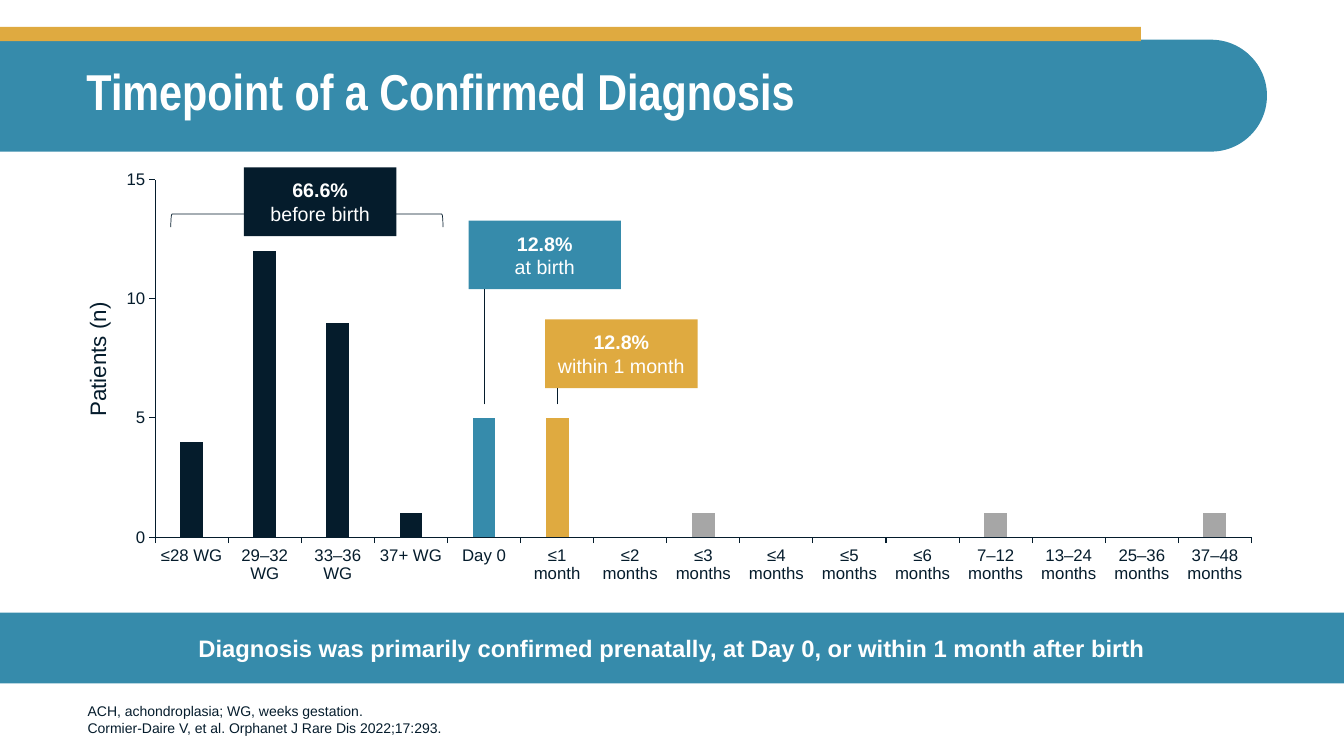
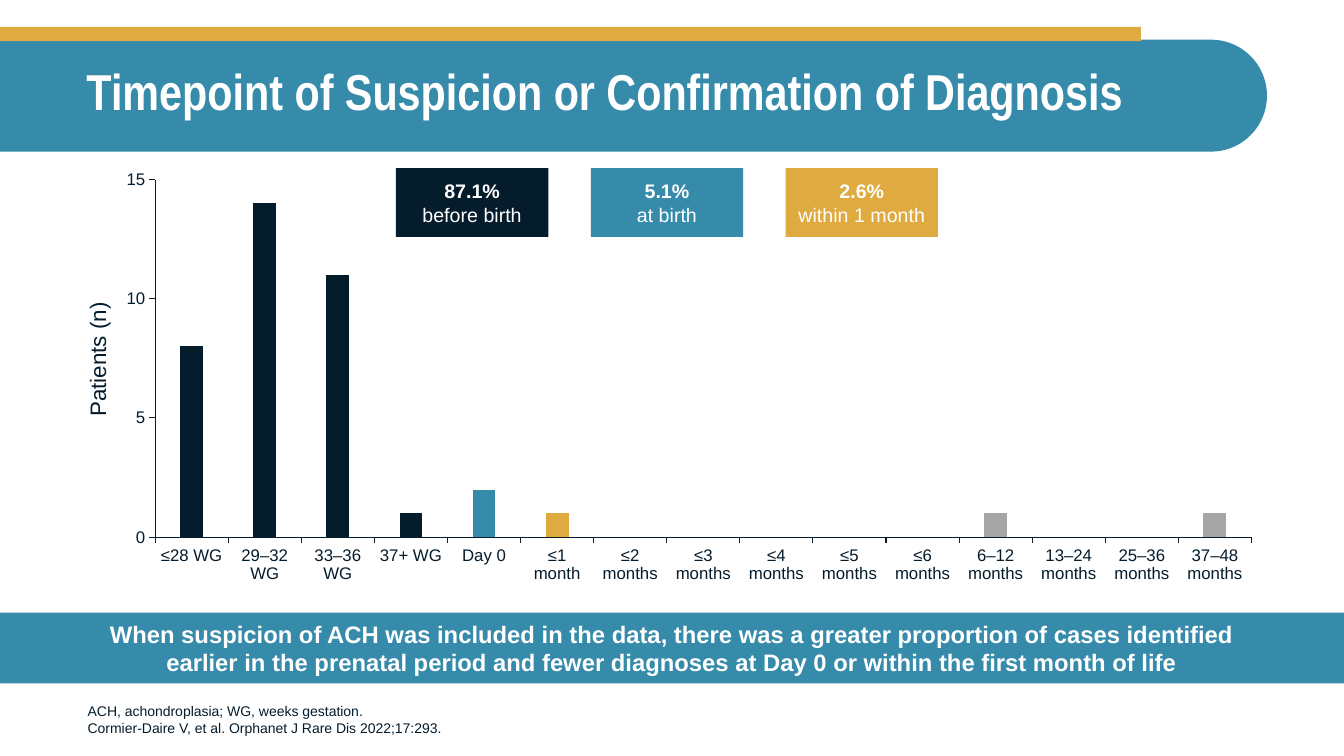
from dataclasses import dataclass

from lxml import etree
from pptx import Presentation
from pptx.chart.data import CategoryChartData
from pptx.dml.color import RGBColor
from pptx.enum.chart import XL_CHART_TYPE, XL_TICK_MARK
from pptx.enum.shapes import MSO_CONNECTOR, MSO_SHAPE
from pptx.enum.text import MSO_ANCHOR, PP_ALIGN
from pptx.oxml import parse_xml
from pptx.oxml.ns import nsdecls, qn
from pptx.util import Cm, Pt

COLUMNS = XL_CHART_TYPE.COLUMN_CLUSTERED
TICK_OUT, TICK_NONE = XL_TICK_MARK.OUTSIDE, XL_TICK_MARK.NONE
STRAIGHT = MSO_CONNECTOR.STRAIGHT
RECT = MSO_SHAPE.RECTANGLE
ROUND_END = MSO_SHAPE.ROUND_2_SAME_RECTANGLE
BRACKET = MSO_SHAPE.RIGHT_BRACKET
LEFT, CENTER = PP_ALIGN.LEFT, PP_ALIGN.CENTER
MIDDLE, BOTTOM = MSO_ANCHOR.MIDDLE, MSO_ANCHOR.BOTTOM


@dataclass(frozen=True)
class Theme:
    navy: RGBColor = RGBColor.from_string("051C2C")
    teal: RGBColor = RGBColor.from_string("368BAB")
    gold: RGBColor = RGBColor.from_string("DFAA40")
    grey: RGBColor = RGBColor.from_string("A6A6A6")
    white: RGBColor = RGBColor.from_string("FFFFFF")
    title_font: str = "Arial Narrow"
    body_font: str = "Arial"
    title: int = 36
    message: int = 17
    axis_title: int = 16
    tag: int = 14
    tick: int = 12
    footnote: int = 10
    hairline: float = 0.5
    axis_line: float = 0.75


THEME = Theme()

# Content
FOOTNOTES = [
    "ACH, achondroplasia; WG, weeks gestation.",
    "Cormier‑Daire V, et al. Orphanet J Rare Dis 2022;17:293.",
]
AXIS_TITLE = "Patients (n)"
BEFORE_BIRTH = ["≤28 WG", "29–32 WG", "33–36 WG", "37+ WG"]
FIRST_MONTH = ["Day 0", "≤1 month"]
MONTHS = [f"≤{month} months" for month in range(2, 7)]
LATE = ["13–24 months", "25–36 months", "37–48 months"]
STAGES = [("before birth", THEME.navy), ("at birth", THEME.teal),
          ("within 1 month", THEME.gold)]
SLIDES = [
    {
        "title": "Timepoint of a Confirmed Diagnosis",
        "message": "Diagnosis was primarily confirmed prenatally, at Day 0, "
                   "or within 1 month after birth",
        "half_year": "7–12 months",
        "patients": [4, 12, 9, 1, 5, 5, None, 1, None, None, None, 1, None, None, 1],
        "shares": ["66.6%", "12.8%", "12.8%"],
        "tag_places": [(6.15, 4.22), (11.81, 5.56), (13.74, 8.05)],
        "pointers": True,
    },
    {
        "title": "Timepoint of Suspicion or Confirmation of Diagnosis",
        "message": "When suspicion of ACH was included in the data, there was a greater "
                   "proportion of cases identified earlier in the prenatal period and "
                   "fewer diagnoses at Day 0 or within the first month of life",
        "half_year": "6–12 months",
        "patients": [8, 14, 11, 1, 2, 1, None, None, None, None, None, 1, None, None, 1],
        "shares": ["87.1%", "5.1%", "2.6%"],
        "tag_places": [(9.98 + 4.91 * i, 4.24) for i in range(3)],
        "pointers": False,
    },
]

# Geometry in centimetres
PAGE_W, PAGE_H = 33.87, 19.05
BAND_W, BAND_H, BAND_TOP = 31.93, 2.82, 1
CHART_X, CHART_Y, CHART_W, CHART_H = 1.93, 4.04, 30, 10.77
PLOT = {"x": 0.066, "y": 0.045, "w": 0.921, "h": 0.837}
TAG_W, TAG_H = 3.84, 1.73
POINTER_END = 10.19
CATEGORY_COUNT = len(BEFORE_BIRTH + FIRST_MONTH + MONTHS + LATE) + 1


def category_center(index):
    step = CHART_W * PLOT["w"] / CATEGORY_COUNT
    return CHART_X + CHART_W * PLOT["x"] + step * (index + 0.5)


def bar_color(index):
    stage = max(0, index - len(BEFORE_BIRTH) + 1)
    return STAGES[stage][1] if stage < len(STAGES) else THEME.grey


# Building blocks
def style(font, size, color, bold=False, name=THEME.body_font):
    font.name, font.size, font.bold = name, Pt(size), bold
    font.color.rgb = color


def write(shape, lines, size, color, align=LEFT, anchor=MIDDLE, bold=(),
          name=THEME.body_font):
    """One paragraph per line; bold lists the indexes of bold lines."""
    frame = shape.text_frame
    frame.word_wrap = True
    frame.vertical_anchor = anchor
    for i, line in enumerate(lines):
        paragraph = frame.add_paragraph() if i else frame.paragraphs[0]
        paragraph.alignment = align
        run = paragraph.add_run()
        run.text = line
        style(run.font, size, color, i in bold, name)
    return frame


def add_box(slide, kind, x, y, w, h, fill):
    box = slide.shapes.add_shape(kind, Cm(x), Cm(y), Cm(w), Cm(h))
    box.shadow.inherit = False
    box.fill.solid()
    box.fill.fore_color.rgb = fill
    box.line.fill.background()
    return box


def add_text(slide, x, y, w, h, lines, size, color, **options):
    box = slide.shapes.add_textbox(Cm(x), Cm(y), Cm(w), Cm(h))
    return box, write(box, lines, size, color, **options)


def add_frame(slide, title, message):
    # Title band, drawn upright and turned so its round end faces right
    band = add_box(slide, ROUND_END, (BAND_W - BAND_H) / 2,
                   BAND_TOP + (BAND_H - BAND_W) / 2, BAND_H, BAND_W, THEME.teal)
    band.adjustments[0], band.adjustments[1] = 0, 0.5
    band.rotation = 270
    add_box(slide, RECT, 0, 0.68, 28.75, 0.36, THEME.gold)
    _, heading = add_text(slide, CHART_X, 0.99, CHART_W, 2.79, [title], THEME.title,
                          THEME.white, bold=(0,), name=THEME.title_font)
    heading.paragraphs[0].line_spacing = 0.9

    # Footnotes and key message
    add_text(slide, 1.96, 17.25, 25.1, 1.42, FOOTNOTES, THEME.footnote, THEME.navy,
             anchor=BOTTOM)
    banner = add_box(slide, RECT, 0, 15.44, PAGE_W, 1.78, THEME.teal)
    frame = write(banner, [message], THEME.message, THEME.white, CENTER, bold=(0,))
    frame.margin_left = frame.margin_right = Cm(2)


def add_patient_chart(slide, half_year, patients):
    data = CategoryChartData()
    data.categories = BEFORE_BIRTH + FIRST_MONTH + MONTHS + [half_year] + LATE
    data.add_series(AXIS_TITLE, patients)
    chart = slide.shapes.add_chart(COLUMNS, Cm(CHART_X), Cm(CHART_Y), Cm(CHART_W),
                                   Cm(CHART_H), data).chart
    chart.has_legend = chart.has_title = False
    style(chart.font, THEME.tick, THEME.navy)

    for axis in (chart.category_axis, chart.value_axis):
        axis.has_major_gridlines = False
        axis.major_tick_mark, axis.minor_tick_mark = TICK_OUT, TICK_NONE
        axis.format.line.color.rgb = THEME.navy
        axis.format.line.width = Pt(THEME.axis_line)
        style(axis.tick_labels.font, THEME.tick, THEME.navy)
    counts = chart.value_axis
    counts.minimum_scale, counts.maximum_scale, counts.major_unit = 0, 15, 5

    plot = chart.plots[0]
    plot.gap_width, plot.overlap, plot.vary_by_categories = 219, -27, False
    bars = plot.series[0]
    bars.invert_if_negative = False
    bars.format.fill.solid()
    bars.format.fill.fore_color.rgb = THEME.navy
    for i, count in enumerate(patients):
        if count and i >= len(BEFORE_BIRTH):
            fill = bars.points[i].format.fill
            fill.solid()
            fill.fore_color.rgb = bar_color(i)

    # Fixed inner plot area
    area = chart.element.find(".//" + qn("c:plotArea"))
    for old in area.findall(qn("c:layout")):
        area.remove(old)
    modes = '<c:layoutTarget val="inner"/><c:xMode val="edge"/><c:yMode val="edge"/>'
    sizes = "".join(f'<c:{key} val="{value}"/>' for key, value in PLOT.items())
    area.insert(0, parse_xml(f'<c:layout {nsdecls("c")}><c:manualLayout>{modes}{sizes}'
                             '</c:manualLayout></c:layout>'))

    label, _ = add_text(slide, 0.45, 8.59, 4, 0.94, [AXIS_TITLE], THEME.axis_title,
                        THEME.navy, align=CENTER)
    label.rotation = 270


def add_bracket(slide):
    bracket = slide.shapes.add_shape(BRACKET, Cm(7.57), Cm(2.13), Cm(0.33), Cm(6.86))
    bracket.rotation = 270
    bracket.shadow.inherit = False
    bracket.fill.background()
    bracket.line.color.rgb = THEME.navy
    bracket.line.width = Pt(THEME.hairline)


def add_pointer(slide, x, top):
    pointer = slide.shapes.add_connector(STRAIGHT, Cm(x), Cm(POINTER_END), Cm(x), Cm(top))
    pointer.line.color.rgb = THEME.navy
    pointer.line.width = Pt(THEME.hairline)
    etree.SubElement(pointer.element.spPr, qn("a:effectLst"))


def add_tags(slide, shares, places, pointers):
    if pointers:
        add_bracket(slide)
    for share, (stage, fill), (x, y) in zip(shares, STAGES, places):
        tag = add_box(slide, RECT, x, y, TAG_W, TAG_H, fill)
        write(tag, [share, stage], THEME.tag, THEME.white, CENTER, bold=(0,))
    if pointers:
        for i, (_, y) in enumerate(places[1:], start=len(BEFORE_BIRTH)):
            add_pointer(slide, category_center(i), y + TAG_H)


def main():
    deck = Presentation()
    deck.slide_width, deck.slide_height = Cm(PAGE_W), Cm(PAGE_H)
    for content in SLIDES:
        slide = deck.slides.add_slide(deck.slide_layouts[6])
        add_frame(slide, content["title"], content["message"])
        add_patient_chart(slide, content["half_year"], content["patients"])
        add_tags(slide, content["shares"], content["tag_places"], content["pointers"])
    deck.save("out.pptx")


if __name__ == "__main__":
    main()
